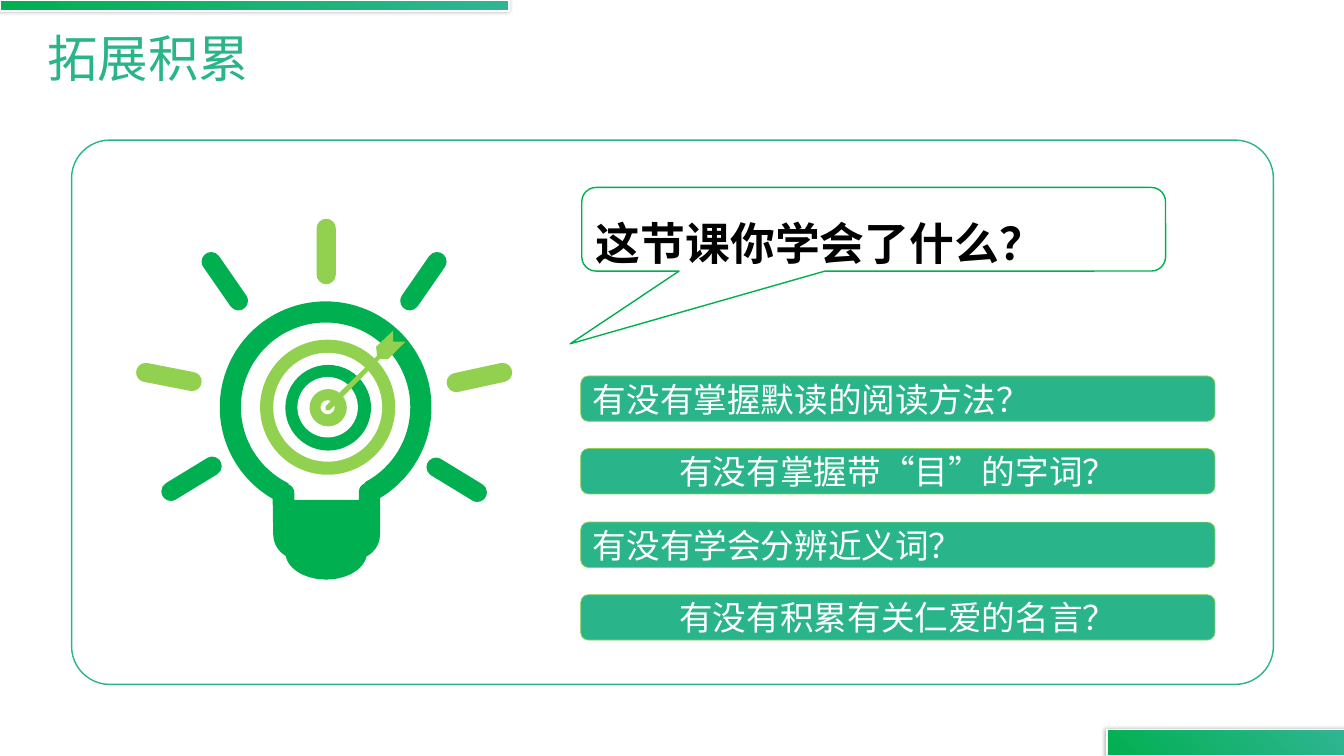
"""Build the lesson review slide with a light bulb target and four question bars."""
from dataclasses import dataclass
from math import atan2, ceil, cos, degrees, floor, radians, sin, tan
from typing import Any, Optional

from lxml.etree import SubElement
from pptx import Presentation
from pptx.dml.color import RGBColor
from pptx.enum.shapes import MSO_SHAPE
from pptx.enum.text import MSO_ANCHOR, PP_ALIGN
from pptx.oxml.ns import qn
from pptx.util import Pt

PX = 9144
COLOURS = {
    "teal": "2AB48A",
    "mint": "30B593",
    "green": "00B050",
    "lime": "92D050",
    "white": "FFFFFF",
    "black": "000000",
}
Box = tuple[int, int, int, int]
Point = tuple[float, float]


@dataclass(frozen=True)
class Panel:
    kind: MSO_SHAPE
    box: Box
    fill: Optional[str] = None
    line: Optional[str] = None
    weight: float = 1
    adjustments: tuple[float, ...] = ()


@dataclass(frozen=True)
class Label:
    text: str
    size: int
    colour: str
    bold: bool = False
    align: PP_ALIGN = PP_ALIGN.LEFT
    line_spacing: float = 1.0
    space_before: int = 0
    margin_top: int = 5


@dataclass(frozen=True)
class Ray:
    box: Box
    colour: str
    rising: bool = False


EDGE_BARS: list[Box] = [(0, 0, 505, 11), (1098, 724, 236, 26)]
FRAME = Panel(MSO_SHAPE.ROUNDED_RECTANGLE, (71, 139, 1192, 540), None, "teal", 1, (0.07,))
CALLOUT = Panel(MSO_SHAPE.ROUNDED_RECTANGULAR_CALLOUT, (577, 186, 579, 83),
                "white", "green", 1, (-0.52, 1.37, 0.17))
TITLE_BOX: Box = (37, 29, 302, 55)
TITLE = Label("拓展积累", 36, "teal", line_spacing=0.9, space_before=10, margin_top=13)
HEADING = Label("这节课你学会了什么？", 32, "black", bold=True, line_spacing=1.5)
QUESTIONS = [
    Label("有没有掌握默读的阅读方法？", 24, "white"),
    Label("有没有掌握带“目”的字词？", 24, "white", align=PP_ALIGN.CENTER),
    Label("有没有学会分辨近义词？", 24, "white"),
    Label("有没有积累有关仁爱的名言？", 24, "white", align=PP_ALIGN.CENTER),
]
QUESTION_TOP, QUESTION_STEP = 373, 72.4
RAYS = [
    Ray((423, 454, 60, 44), "green"),
    Ray((443, 360, 65, 29), "lime", rising=True),
    Ray((397, 250, 46, 58), "green", rising=True),
    Ray((314, 217, 19, 65), "lime"),
    Ray((160, 453, 60, 44), "green", rising=True),
    Ray((135, 360, 65, 28), "lime"),
    Ray((200, 250, 46, 58), "green"),
]
RAY_RADIUS = 9.5
TARGET_CENTRE = (325, 404)
TARGET_RINGS = [(134, "lime"), (108, "white"), (85, "green"),
                (60, "white"), (37, "lime"), (14, "white")]
DART: list[Point] = [(377, 356), (385, 356), (402, 339), (390, 339), (390, 328), (373, 344),
                     (374, 353), (323, 403), (323, 407), (327, 407)]


def colour(name: str) -> RGBColor:
    return RGBColor.from_string(COLOURS[name])


def emu(box: Box) -> list[int]:
    return [value * PX for value in box]


def apply(target: Any, values: dict[str, Any]) -> None:
    for name, value in values.items():
        setattr(target, name, value)


def paint(shape: Any, fill: Optional[str], line: Optional[str] = None, weight: float = 1) -> None:
    shape.shadow.inherit = False
    for part, name in ((shape.fill, fill), (shape.line.fill, line)):
        if name is None:
            part.background()
        else:
            part.solid()
            part.fore_color.rgb = colour(name)
    if line is not None:
        shape.line.width = Pt(weight)


def draw_panel(shapes: Any, panel: Panel) -> Any:
    shape = shapes.add_shape(panel.kind, *emu(panel.box))
    for index, value in enumerate(panel.adjustments):
        shape.adjustments[index] = value
    paint(shape, panel.fill, panel.line, panel.weight)
    return shape


def write(shape: Any, label: Label) -> None:
    frame = shape.text_frame
    apply(frame, {"word_wrap": True, "vertical_anchor": MSO_ANCHOR.MIDDLE,
                  "margin_top": label.margin_top * PX})
    para = frame.paragraphs[0]
    apply(para, {"alignment": label.align, "line_spacing": label.line_spacing,
                 "space_before": Pt(label.space_before)})
    span = para.add_run()
    span.text = label.text
    apply(span.font, {"name": "Arial", "size": Pt(label.size), "bold": label.bold})
    span.font.color.rgb = colour(label.colour)


def draw_edge_bar(shapes: Any, box: Box) -> None:
    bar = draw_panel(shapes, Panel(MSO_SHAPE.RECTANGLE, box, "green", "white"))
    bar.fill.gradient()
    bar.fill.gradient_angle = 315
    for stop, position, name in zip(bar.fill.gradient_stops, (0, 1), ("mint", "green")):
        stop.position = position
        stop.color.rgb = colour(name)
    properties = bar.element.spPr
    properties.find(qn("a:xfrm")).set("flipH", "1")
    shadow = SubElement(properties.find(qn("a:effectLst")), qn("a:outerShdw"),
                        blurRad=str(Pt(3)), dist=str(Pt(1)), dir="10800000")
    tint = SubElement(shadow, qn("a:srgbClr"), val=COLOURS["black"])
    SubElement(tint, qn("a:alpha"), val="30000")


def arc(x: float, y: float, rx: float, ry: float, start: float, end: float) -> list[Point]:
    low, high = sorted((start, end))
    quarters = [90 * turn for turn in range(floor(low / 90) + 1, ceil(high / 90))]
    stops = sorted([start, *quarters, end], reverse=end < start)
    points = [(x + rx * cos(radians(start)), y + ry * sin(radians(start)))]
    for first, last in zip(stops, stops[1:]):
        a, b = radians(first), radians(last)
        pull = 4 / 3 * tan((b - a) / 4)
        points += [(x + rx * (cos(a) - pull * sin(a)), y + ry * (sin(a) + pull * cos(a))),
                   (x + rx * (cos(b) + pull * sin(b)), y + ry * (sin(b) - pull * cos(b))),
                   (x + rx * cos(b), y + ry * sin(b))]
    return points


def join(*arcs: list[Point]) -> list[Point]:
    points = list(arcs[0])
    for following in arcs[1:]:
        points += [following[0]] * 3 + following[1:]
    return points


def draw_outline(shapes: Any, fill: str, *contours: list[Point], curved: bool = True) -> None:
    scaled = [[(round(x * 10), round(y * 10)) for x, y in contour] for contour in contours]
    builder = shapes.build_freeform(*scaled[0][0], scale=PX / 10)
    for index, points in enumerate(scaled):
        if index:
            builder.move_to(*points[0])
        builder.add_line_segments(points[1:], close=True)
    shape = builder.convert_to_shape()
    paint(shape, fill)
    lines = list(shape.element.iter(qn("a:lnTo"))) if curved else []
    for first, second, third in zip(lines[::3], lines[1::3], lines[2::3]):
        first.tag = qn("a:cubicBezTo")
        for line in (second, third):
            first.append(line[0])
            line.getparent().remove(line)


def draw_ray(shapes: Any, ray: Ray) -> None:
    left, top, width, height = ray.box
    r = RAY_RADIUS
    x1, x2, y1, y2 = left + r, left + width - r, top + r, top + height - r
    if ray.rising:
        y1, y2 = y2, y1
    turn = degrees(atan2(y2 - y1, x2 - x1))
    caps = arc(x2, y2, r, r, turn - 90, turn + 90), arc(x1, y1, r, r, turn + 90, turn + 270)
    draw_outline(shapes, ray.colour, join(*caps))


def draw_bulb(shapes: Any) -> None:
    for ray in RAYS:
        draw_ray(shapes, ray)
    draw_outline(shapes, "green", arc(323.5, 548, 40.5, 27, 0, 180))
    glass = join(arc(323, 404, 105, 105, 120, 419), arc(352, 530, 25, 25, 0, 90),
                 arc(296, 530, 25, 25, 90, 180))
    hollow = join(arc(323, 404, 84, 84, 116, 422), arc(365, 488, 9, 9, 250, 180),
                  [(356, 496)], [(292, 496)], arc(283, 489, 9, 9, 0, -70))
    draw_outline(shapes, "green", glass, hollow)
    x, y = TARGET_CENTRE
    for size, fill in TARGET_RINGS:
        box = (x - size // 2, y - size // 2, size, size)
        draw_panel(shapes, Panel(MSO_SHAPE.OVAL, box, fill))
    draw_outline(shapes, "lime", DART, curved=False)


def main() -> None:
    deck = Presentation()
    apply(deck, {"slide_width": 1333 * PX, "slide_height": 750 * PX})
    page = deck.slides.add_slide(deck.slide_layouts[6])
    for box in EDGE_BARS:
        draw_edge_bar(page.shapes, box)
    draw_panel(page.shapes, FRAME)
    write(page.shapes.add_textbox(*emu(TITLE_BOX)), TITLE)
    write(draw_panel(page.shapes, CALLOUT), HEADING)
    for index, question in enumerate(QUESTIONS):
        box = (576, QUESTION_TOP + round(index * QUESTION_STEP), 629, 45)
        bar = Panel(MSO_SHAPE.ROUNDED_RECTANGLE, box, "teal", "lime", 0.5)
        write(draw_panel(page.shapes, bar), question)
    draw_bulb(page.shapes.add_group_shape().shapes)
    deck.save("out.pptx")


if __name__ == "__main__":
    main()
